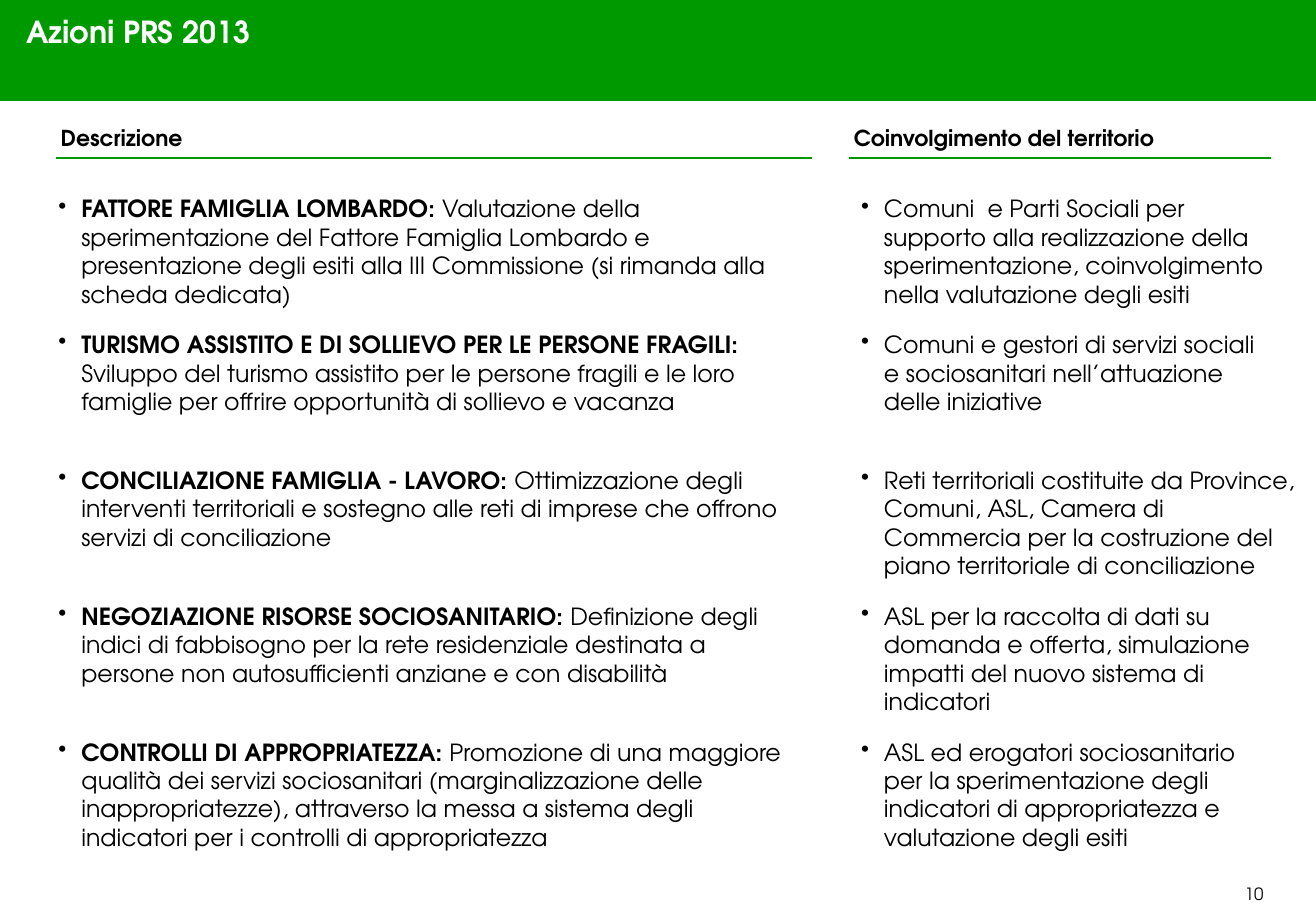
import pptx
import pptx.dml.color
import pptx.enum.shapes
import pptx.enum.text
import pptx.util
from lxml import etree
from pptx.util import Cm, Pt

GREEN, BLACK, WHITE = "009900", "000000", "FFFFFF"
LEFT_COLUMN, RIGHT_COLUMN = 1.17, 17.75
FIRST_ROW, ROW_STEP = 3.94, 2.84

# Title, description, its lines, territory, its lines, territory width
ACTIONS = [
    ("FATTORE FAMIGLIA LOMBARDO: ",
     "Valutazione della sperimentazione del Fattore Famiglia Lombardo e presentazione "
     "degli esiti alla III Commissione (si rimanda alla scheda dedicata)", 4,
     "Comuni  e Parti Sociali per supporto alla realizzazione della sperimentazione, "
     "coinvolgimento nella valutazione degli esiti", 4, 9.2),
    ("TURISMO ASSISTITO E DI SOLLIEVO PER LE PERSONE FRAGILI: ",
     "Sviluppo del turismo assistito per le persone fragili e le loro famiglie per "
     "offrire opportunità di sollievo e vacanza", 3,
     "Comuni e gestori di servizi sociali e sociosanitari nell’attuazione delle "
     "iniziative", 3, 8.8),
    ("CONCILIAZIONE FAMIGLIA - LAVORO: ",
     "Ottimizzazione degli interventi territoriali e sostegno alle reti di imprese che "
     "offrono servizi di conciliazione", 3,
     "Reti territoriali costituite da Province, Comuni, ASL, Camera di Commercia per la "
     "costruzione del piano territoriale di conciliazione", 4, 9.75),
    ("NEGOZIAZIONE RISORSE SOCIOSANITARIO: ",
     "Definizione degli indici di fabbisogno per la rete residenziale destinata a "
     "persone non autosufficienti anziane e con disabilità", 3,
     "ASL per la raccolta di dati su domanda e offerta, simulazione impatti del nuovo "
     "sistema di indicatori", 4, 8.8),
    ("CONTROLLI DI APPROPRIATEZZA: ",
     "Promozione di una maggiore qualità dei servizi sociosanitari (marginalizzazione "
     "delle inappropriatezze), attraverso la messa a sistema degli indicatori per i "
     "controlli di appropriatezza", 4,
     "ASL ed erogatori sociosanitario per la sperimentazione degli indicatori di "
     "appropriatezza e valutazione degli esiti", 4, 8.8),
]


def color(value):
    return pptx.dml.color.RGBColor.from_string(value)


def write(paragraph, text, font="TeX Gyre Adventor", size=14, bold=False, fill=BLACK):
    run = paragraph.add_run()
    run.text = text
    run.font.name = font
    run.font.size = Pt(size)
    run.font.bold = bold
    run.font.color.rgb = color(fill)


class ActionSlide:
    def __init__(self, presentation):
        self.slide = presentation.slides.add_slide(presentation.slide_layouts[6])
        self.shapes = self.slide.shapes

    def band(self, left, top, width, height):
        band = self.shapes.add_shape(pptx.enum.shapes.MSO_SHAPE.RECTANGLE,
                                     Cm(left), Cm(top), Cm(width), Cm(height))
        band.shadow.inherit = False
        band.fill.solid()
        band.fill.fore_color.rgb = color(GREEN)
        band.line.fill.background()

    def rule(self, left, right, top):
        rule = self.shapes.add_connector(pptx.enum.shapes.MSO_CONNECTOR.STRAIGHT,
                                         Cm(left), Cm(top), Cm(right), Cm(top))
        rule.line.color.rgb = color(GREEN)
        rule.line.width = Pt(1.5)
        etree.SubElement(rule._element.spPr, pptx.oxml.ns.qn("a:effectLst"))

    def text(self, left, top, width, height, text="", parent=None, wrap=True,
             side_inset=0.25, align=pptx.enum.text.PP_ALIGN.LEFT, **style):
        box = (parent or self.shapes).add_textbox(Cm(left), Cm(top), Cm(width), Cm(height))
        frame = box.text_frame
        frame.word_wrap = wrap
        frame.auto_size = pptx.enum.text.MSO_AUTO_SIZE.SHAPE_TO_FIT_TEXT
        frame.margin_left = frame.margin_right = Cm(side_inset)
        paragraph = frame.paragraphs[0]
        paragraph.alignment = align
        if text:
            write(paragraph, text, **style)
        return paragraph

    def heading(self, left, right, width, text):
        self.text(left, 2.49, width, 0.81, text, wrap=False, side_inset=0.1,
                  size=13, bold=True)
        self.rule(left, right, 3.3)

    def bullet(self, parent, left, top, width, lines):
        paragraph = self.text(left, top, width, 0.25 + 0.6 * lines, parent=parent)
        paragraph.space_before = Pt(6)
        paragraph.space_after = Pt(12)
        properties = paragraph._p.get_or_add_pPr()
        properties.set("marL", str(Cm(0.48)))
        properties.set("indent", str(-Cm(0.48)))
        etree.SubElement(properties, pptx.oxml.ns.qn("a:buChar"), char="•")
        return paragraph

    def action(self, top, title, description, lines, territory, territory_lines, width):
        row = self.shapes.add_group_shape().shapes
        left_text = self.bullet(row, 0.97, top, 16, lines)
        write(left_text, title, bold=True)
        write(left_text, description)
        write(self.bullet(row, RIGHT_COLUMN, top, width, territory_lines), territory)


def main():
    presentation = pptx.Presentation()
    presentation.slide_width = Cm(27.51)
    presentation.slide_height = Cm(19.05)
    page = ActionSlide(presentation)

    # Title band and page number
    page.band(0, 0, 27.51, 2.11)
    page.text(0.3, 0.15, 26.64, 1.02, "Azioni PRS 2013", size=18, bold=True, fill=WHITE)
    page.text(24.92, 18.36, 2.59, 0.69, "10", size=10,
              align=pptx.enum.text.PP_ALIGN.CENTER)

    # Column headings
    page.heading(LEFT_COLUMN, 16.97, 2.79, "Descrizione")
    page.heading(RIGHT_COLUMN, 26.57, 6.6, "Coinvolgimento del territorio")

    # Actions, one row each
    for index, action in enumerate(ACTIONS):
        page.action(FIRST_ROW + index * ROW_STEP, *action)

    presentation.save("out.pptx")


if __name__ == "__main__":
    main()
